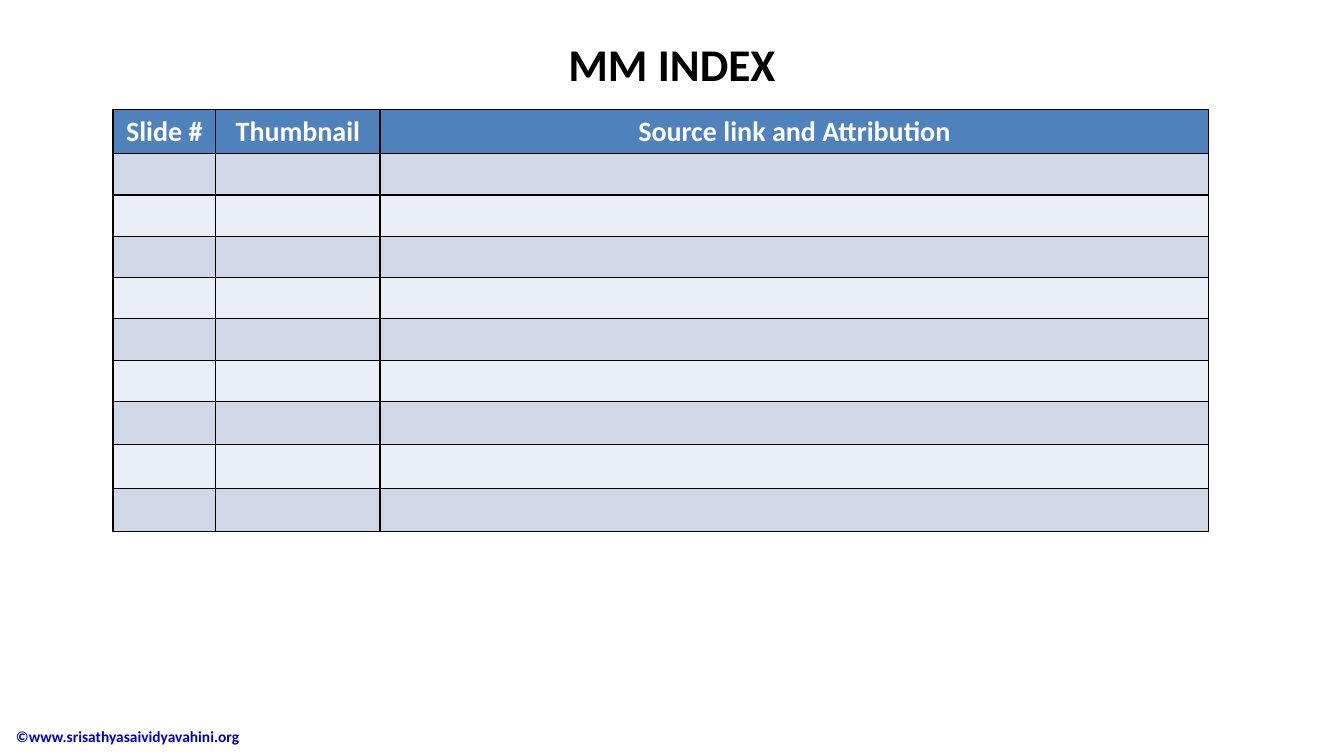
from dataclasses import dataclass

from lxml.etree import SubElement
from pptx import Presentation
from pptx.dml.color import RGBColor
from pptx.enum.text import MSO_ANCHOR as Anchor, PP_ALIGN as Align
from pptx.oxml.ns import qn
from pptx.util import Inches, Pt

FONT = "Calibri"
COLORS = {
    "title": "000000",
    "footer": "0000CC",
    "border": "000000",
    "header": "4F81BD",
    "header_text": "FFFFFF",
    "band_dark": "D0D8E8",
    "band_light": "E9EDF4",
}


@dataclass
class Column:
    heading: str
    width: float


@dataclass
class Label:
    text: str
    left: float
    top: float
    width: float
    height: float
    size: float
    color: str
    align: Align
    anchor: Anchor
    margin: float = 0


COLUMNS = [
    Column("Slide #", 1.02),
    Column("Thumbnail", 1.63),
    Column("Source link and Attribution", 8.22),
]
ROW_HEIGHTS = [0.43] + [0.41] * 6 + [0.43] * 3
LABELS = [
    Label("©www.srisathyasaividyavahini.org", -0.44, 7.1, 4.03, 0.41, 11,
          "footer", Align.LEFT, Anchor.MIDDLE, 0.5),
    Label("MM INDEX", 1, 0.31, 11.33, 0.55, 32.4,
          "title", Align.CENTER, Anchor.TOP),
]


def rgb(name: str) -> RGBColor:
    return RGBColor.from_string(COLORS[name])


def add_run(p, text: str, size: float, color: str) -> None:
    r = p.add_run()
    r.text = text
    r.font.name = FONT
    r.font.size = Pt(size)
    r.font.bold = True
    r.font.color.rgb = rgb(color)


def add_label(s, label: Label) -> None:
    sp = s.shapes.add_textbox(Inches(label.left), Inches(label.top),
                              Inches(label.width), Inches(label.height))
    tf = sp.text_frame
    tf.word_wrap = True
    tf.vertical_anchor = label.anchor
    p = tf.paragraphs[0]
    p.alignment = label.align
    if label.margin:
        p._p.get_or_add_pPr().set("marL", str(Inches(label.margin)))
    add_run(p, label.text, label.size, label.color)


def style_cell(cell, fill: str) -> None:
    # Borders come before the fill in the cell properties
    tc_pr = cell._tc.get_or_add_tcPr()
    for side in ("lnL", "lnR", "lnT", "lnB"):
        line = SubElement(tc_pr, qn(f"a:{side}"), w=str(Pt(1)))
        solid = SubElement(line, qn("a:solidFill"))
        SubElement(solid, qn("a:srgbClr"), val=COLORS["border"])
    cell.fill.solid()
    cell.fill.fore_color.rgb = rgb(fill)


def add_index_table(s, left: float, top: float) -> None:
    width = sum(column.width for column in COLUMNS)
    table = s.shapes.add_table(
        len(ROW_HEIGHTS), len(COLUMNS), Inches(left), Inches(top),
        Inches(width), Inches(sum(ROW_HEIGHTS))).table
    for i, height in enumerate(ROW_HEIGHTS):
        table.rows[i].height = Inches(height)
        band = "band_dark" if i % 2 else "band_light"
        for cell in table.rows[i].cells:
            style_cell(cell, band if i else "header")
    for j, column in enumerate(COLUMNS):
        table.columns[j].width = Inches(column.width)
        p = table.cell(0, j).text_frame.paragraphs[0]
        p.alignment = Align.CENTER
        add_run(p, column.heading, 20, "header_text")


def main() -> None:
    prs = Presentation()
    prs.slide_width, prs.slide_height = Inches(13.33), Inches(7.5)
    s = prs.slides.add_slide(prs.slide_layouts[6])
    # Footer and title
    for label in LABELS:
        add_label(s, label)
    # Index table
    add_index_table(s, 1.12, 1.09)
    prs.save("out.pptx")


if __name__ == "__main__":
    main()
